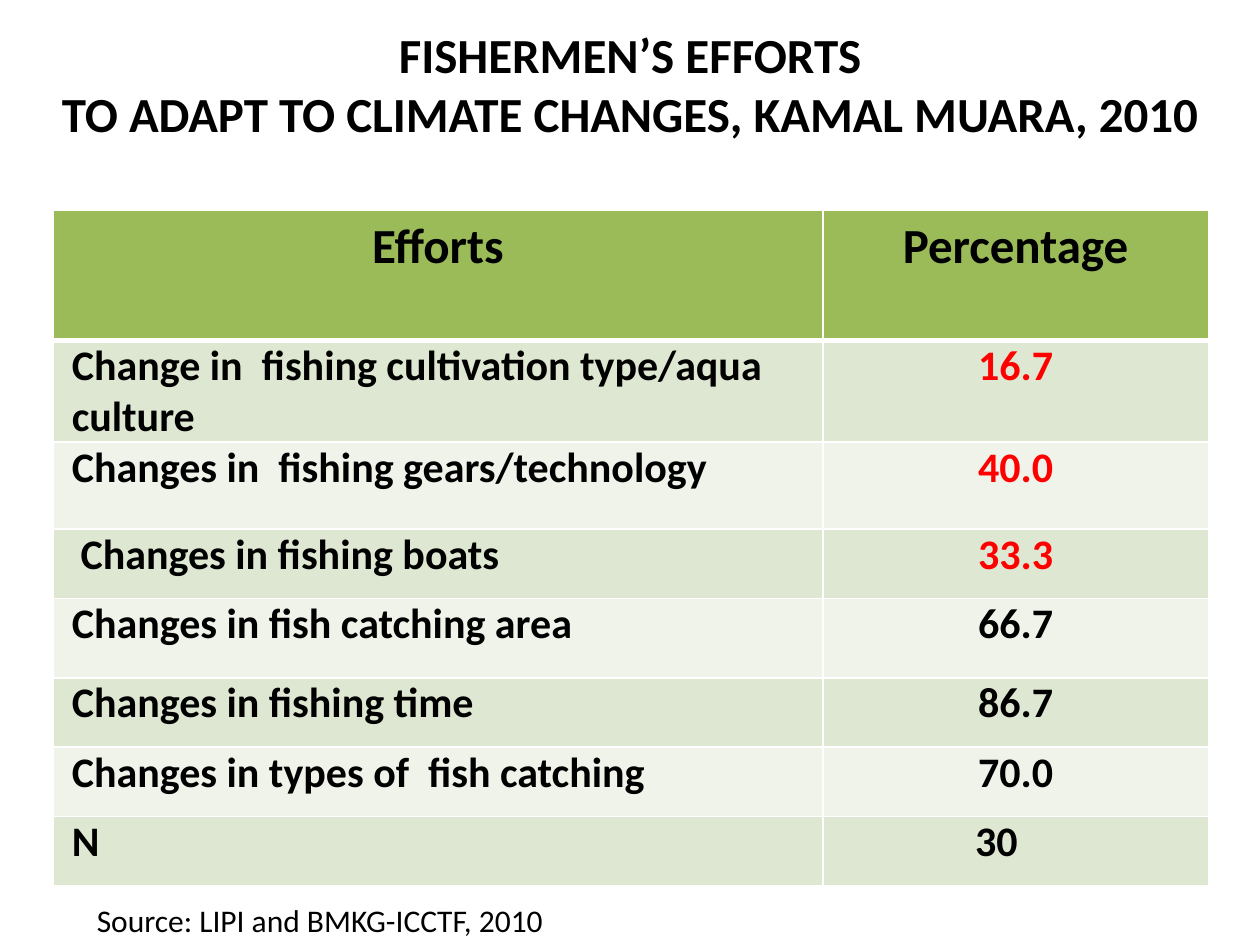
from lxml import etree
from pptx import Presentation
from pptx.dml.color import RGBColor
from pptx.enum.text import MSO_ANCHOR, PP_ALIGN
from pptx.oxml.ns import qn
from pptx.util import Inches, Pt

LEFT, CENTER = PP_ALIGN.LEFT, PP_ALIGN.CENTER
MIDDLE = MSO_ANCHOR.MIDDLE

FONT = "Calibri"
COLORS = {
    "text": "000000",
    "highlight": "FF0000",
    "header": "9BBB59",
    "odd row": "DEE7D1",
    "even row": "EFF3EA",
    "border": "FFFFFF",
}

TITLE = "FISHERMEN’S EFFORTS\vTO ADAPT TO CLIMATE CHANGES, KAMAL MUARA, 2010"
SOURCE = "Source: LIPI and BMKG-ICCTF, 2010"
HEADER = ("Efforts", "Percentage")
# effort, percentage, row height, colour of the percentage
EFFORTS = [
    ("Change in  fishing cultivation type/aqua culture", "16.7", 0.81, "highlight"),
    ("Changes in  fishing gears/technology", "40.0", 0.69, "highlight"),
    ("Changes in fishing boats", "33.3", 0.55, "highlight"),
    ("Changes in fish catching area", "66.7", 0.63, "text"),
    ("Changes in fishing time", "86.7", 0.55, "text"),
    ("Changes in types of  fish catching", "70.0", 0.55, "text"),
    ("N", "30", 0.55, "text"),
]
COLUMN_WIDTHS = (6.11, 3.06)
HEADER_HEIGHT = 1.03
TEXT_INDENT = 0.15
BOATS_INDENT = 0.22
COUNT_INDENT = 1.21


def write(text_frame, text, size, color="text", bold=True, alignment=LEFT):
    text_frame.word_wrap = True
    text_frame.text = text
    paragraph = text_frame.paragraphs[0]
    paragraph.alignment = alignment
    font = paragraph.font
    font.name, font.size, font.bold = FONT, Pt(size), bold
    font.color.rgb = RGBColor.from_string(COLORS[color])


def add_text(slide, box, *args, **kwargs):
    shape = slide.shapes.add_textbox(*map(Inches, box))
    write(shape.text_frame, *args, **kwargs)
    return shape


def style_cell(cell, fill, top=1, bottom=1):
    """Border widths are in points; borders must precede the fill in the XML."""
    properties = cell._tc.get_or_add_tcPr()
    for side, width in (("L", 1), ("R", 1), ("T", top), ("B", bottom)):
        line = etree.SubElement(properties, qn(f"a:ln{side}"), w=str(Pt(width)))
        solid = etree.SubElement(line, qn("a:solidFill"))
        etree.SubElement(solid, qn("a:srgbClr"), val=COLORS["border"])
    cell.fill.solid()
    cell.fill.fore_color.rgb = RGBColor.from_string(COLORS[fill])


def set_margins(cell, left):
    cell.margin_left = Inches(left)
    cell.margin_right = cell.margin_top = cell.margin_bottom = 0


def add_efforts_table(slide):
    heights = [HEADER_HEIGHT] + [effort[2] for effort in EFFORTS]
    box = (0.42, 1.67, sum(COLUMN_WIDTHS), sum(heights))
    table = slide.shapes.add_table(
        len(heights), len(COLUMN_WIDTHS), *map(Inches, box)
    ).table
    for column, width in zip(table.columns, COLUMN_WIDTHS):
        column.width = Inches(width)
    for row, height in zip(table.rows, heights):
        row.height = Inches(height)

    for cell, text in zip(table.rows[0].cells, HEADER):
        style_cell(cell, "header", bottom=3)
        write(cell.text_frame, text, 28, alignment=CENTER)

    for number, (effort, percentage, _, color) in enumerate(EFFORTS, start=1):
        name_cell, value_cell = table.rows[number].cells
        for cell in (name_cell, value_cell):
            style_cell(cell, "odd row" if number % 2 else "even row",
                       top=3 if number == 1 else 1)
        is_count = effort == "N"
        set_margins(name_cell, BOATS_INDENT if "boats" in effort else TEXT_INDENT)
        set_margins(value_cell, COUNT_INDENT if is_count else 0)
        write(name_cell.text_frame, effort, 24)
        write(value_cell.text_frame, percentage, 24, color,
              alignment=LEFT if is_count else CENTER)


def main():
    presentation = Presentation()
    presentation.slide_width, presentation.slide_height = Inches(10), Inches(7.5)
    slide = presentation.slides.add_slide(presentation.slide_layouts[6])
    title = add_text(slide, (0, 0, 10, 1.33), TITLE, 28, alignment=CENTER)
    title.text_frame.vertical_anchor = MIDDLE
    add_efforts_table(slide)
    add_text(slide, (0.67, 7.1, 5.67, 0.4), SOURCE, 18, bold=False)
    presentation.save("out.pptx")


if __name__ == "__main__":
    main()
